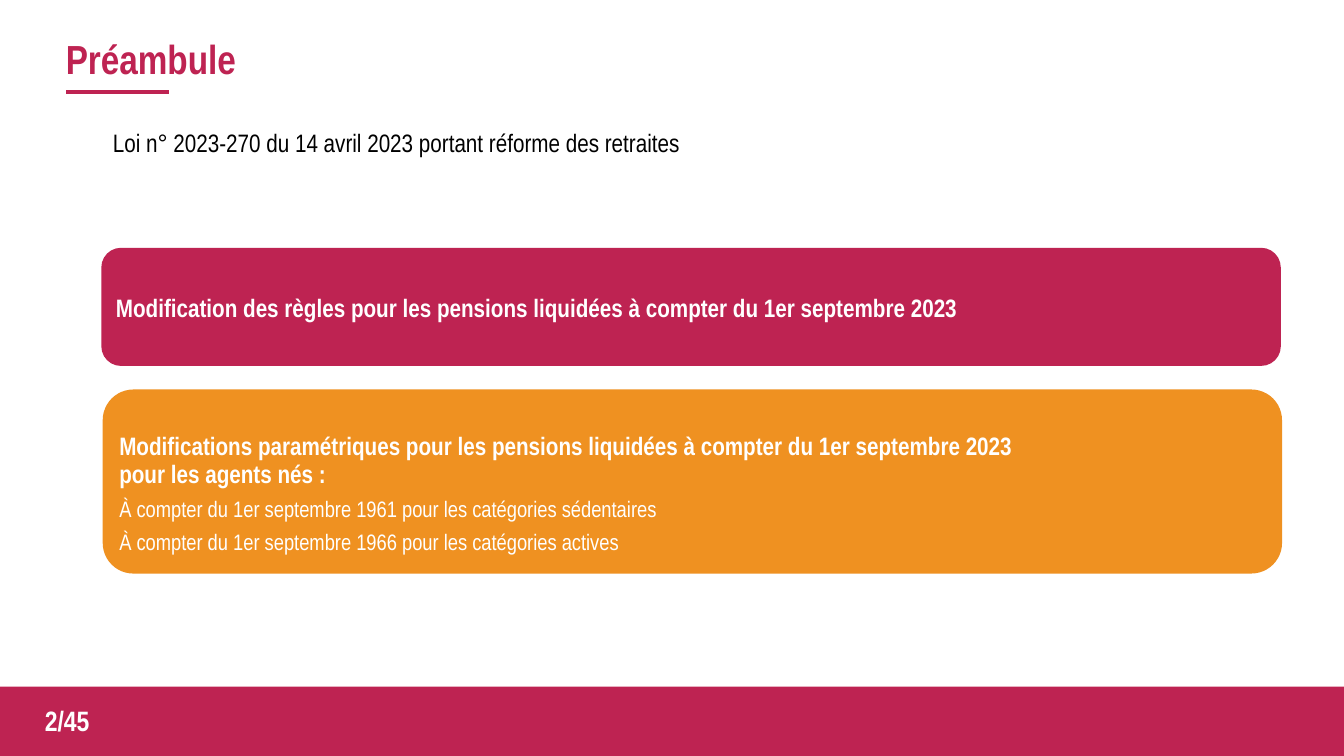
from pptx import Presentation
from pptx.dml.color import RGBColor
from pptx.enum.shapes import MSO_CONNECTOR, MSO_SHAPE
from pptx.enum.text import MSO_ANCHOR, PP_ALIGN
from pptx.util import Pt
from lxml.etree import SubElement
from pptx.oxml.ns import qn

CRIMSON, ORANGE, WHITE, BLACK = "BE2352", "EF9121", "FFFFFF", "000000"


def color(hex_text):
    return RGBColor.from_string(hex_text)


class SlideBuilder:
    font_name = "Arial Narrow"

    def __init__(self, deck):
        self.slide = deck.slides.add_slide(deck.slide_layouts[5])

    def place(self, shape, left, top, width, height):
        shape.left, shape.top = Pt(left), Pt(top)
        shape.width, shape.height = Pt(width), Pt(height)

    def fill_text(self, frame, lines, align=PP_ALIGN.LEFT):
        """Fill a frame with (text, size, colour, bold, line spacing, space before) lines."""
        frame.word_wrap = True
        frame.margin_left = frame.margin_right = frame.margin_bottom = 0
        frame.margin_top = Pt(1)
        frame.text = "\n".join(line[0] for line in lines)
        for para, (_, size, ink, bold, spacing, before) in zip(frame.paragraphs, lines):
            para.alignment = align
            para.line_spacing = spacing
            para.space_before = Pt(before)
            for span in para.runs:
                span.font.name = self.font_name
                span.font.size = Pt(size)
                span.font.bold = bold
                span.font.color.rgb = color(ink)

    def title(self, text, *bounds):
        title = self.slide.shapes.title
        self.place(title, *bounds)
        self.fill_text(title.text_frame, [(text, 29, CRIMSON, True, 1.0, 0)])
        title.text_frame.vertical_anchor = MSO_ANCHOR.MIDDLE

    def text(self, lines, *bounds, align=PP_ALIGN.LEFT):
        box = self.slide.shapes.add_textbox(*map(Pt, bounds))
        self.fill_text(box.text_frame, lines, align)

    def panel(self, kind, fill, *bounds):
        panel = self.slide.shapes.add_shape(kind, *map(Pt, bounds))
        panel.shadow.inherit = False
        panel.fill.solid()
        panel.fill.fore_color.rgb = color(fill)
        panel.line.fill.background()

    def rule(self, left, right, top):
        rule = self.slide.shapes.add_connector(
            MSO_CONNECTOR.STRAIGHT, Pt(left), Pt(top), Pt(right), Pt(top))
        rule.line.color.rgb = color(CRIMSON)
        rule.line.width = Pt(3)
        SubElement(rule._element.spPr, qn("a:effectLst"))


def main():
    deck = Presentation()
    deck.slide_width, deck.slide_height = Pt(960), Pt(540)
    page = SlideBuilder(deck)

    page.panel(MSO_SHAPE.RECTANGLE, CRIMSON, 0, 490.4, 960, 49.6)
    page.title("Préambule", 47, 23, 665, 36)
    page.rule(47.3, 120.7, 66)
    page.text([("Loi n° 2023-270 du 14 avril 2023 portant réforme des retraites",
                18, BLACK, False, 1.0, 0)], 80.6, 90, 494, 24)

    page.panel(MSO_SHAPE.ROUNDED_RECTANGLE, CRIMSON, 72.4, 177, 842.5, 84.4)
    page.text([("Modification des règles pour les pensions liquidées à compter du "
                "1er septembre 2023", 18, WHITE, True, 1.0, 0)], 82.8, 208, 735, 24)

    page.panel(MSO_SHAPE.ROUNDED_RECTANGLE, ORANGE, 73.4, 278.2, 842.4, 131.5)
    page.text([
        ("Modifications paramétriques pour les pensions liquidées à compter du "
         "1er septembre 2023", 18, WHITE, True, Pt(20.1), 0),
        ("pour les agents nés :", 18, WHITE, True, Pt(20.1), 0),
        ("À compter du 1er septembre 1961 pour les catégories sédentaires",
         16, WHITE, False, 1.19, 0.9),
        ("À compter du 1er septembre 1966 pour les catégories actives",
         16, WHITE, False, 1.19, 0.9),
    ], 85.2, 308, 779, 88)

    page.text([("2/45", 20, WHITE, True, 1.0, 0)], 12, 501.5, 72, 26,
              align=PP_ALIGN.CENTER)
    deck.save("out.pptx")


if __name__ == "__main__":
    main()
